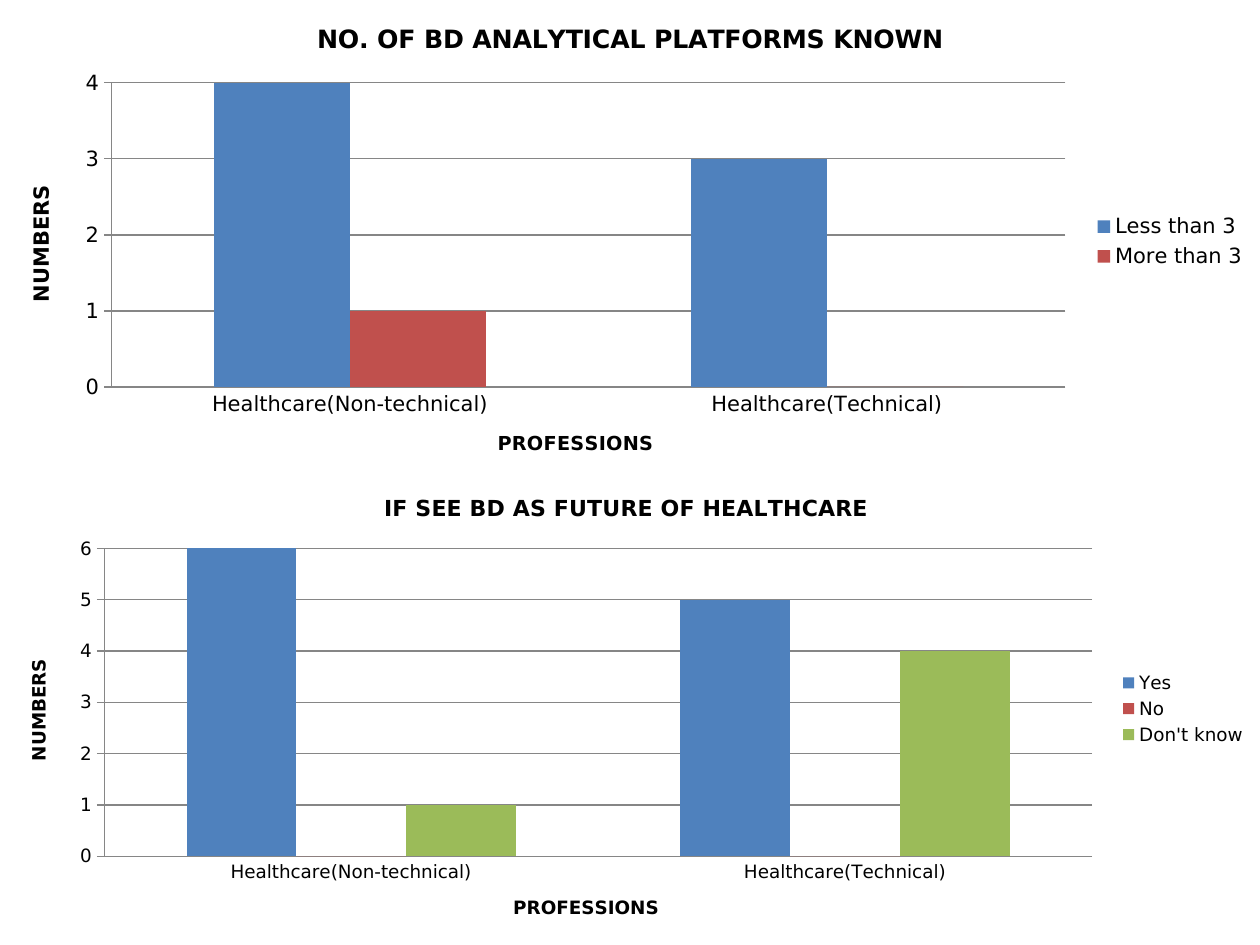
import pptx
import pptx.chart.data
import pptx.dml.color
import pptx.enum.chart
import pptx.oxml
import pptx.oxml.ns
import pptx.util

Pt = pptx.util.Pt


def color(hex_string):
    return pptx.dml.color.RGBColor.from_string(hex_string)


class SlideBuilder:
    font_name = "DejaVu Sans"
    text_color = "000000"
    line_color = "868686"
    border_color = "FFFFFF"
    line_width = 0.75
    series_colors = ["4F81BD", "C0504D", "9BBB59"]

    def __init__(self, slide):
        self.slide = slide

    def format_font(self, font, size, bold=False):
        font.name = self.font_name
        font.size = Pt(size)
        font.bold = bold
        font.color.rgb = color(self.text_color)

    def format_line(self, line):
        line.color.rgb = color(self.line_color)
        line.width = Pt(self.line_width)

    def write_title(self, title, text, size):
        paragraph = title.text_frame.paragraphs[0]
        paragraph.text = text
        self.format_font(paragraph.font, size, bold=True)

    def format_axis(self, axis, text, title_size, size, tick_mark):
        self.write_title(axis.axis_title, text, title_size)
        self.format_font(axis.tick_labels.font, size)
        self.format_line(axis.format.line)
        axis.major_tick_mark = tick_mark
        axis.minor_tick_mark = pptx.enum.chart.XL_TICK_MARK.NONE

    def add_border(self, chart):
        properties = pptx.oxml.parse_xml(
            f'<c:spPr {pptx.oxml.ns.nsdecls("c", "a")}>'
            f'<a:ln w="{Pt(self.line_width)}"><a:solidFill>'
            f'<a:srgbClr val="{self.border_color}"/>'
            '</a:solidFill></a:ln></c:spPr>'
        )
        chart.element.find(pptx.oxml.ns.qn("c:chart")).addnext(properties)

    def add_column_chart(self, top, height, title, title_size, size,
                         category_title_size, maximum, answers):
        chart_data = pptx.chart.data.CategoryChartData()
        chart_data.categories = ["Healthcare(Non-technical)", "Healthcare(Technical)"]
        for name, values in answers.items():
            chart_data.add_series(name, values)
        chart = self.slide.shapes.add_chart(
            pptx.enum.chart.XL_CHART_TYPE.COLUMN_CLUSTERED,
            Pt(0), Pt(top), Pt(720), Pt(height), chart_data,
        ).chart
        self.format_font(chart.font, size)
        self.add_border(chart)
        self.write_title(chart.chart_title, title, title_size)

        tick_marks = pptx.enum.chart.XL_TICK_MARK
        self.format_axis(chart.category_axis, "PROFESSIONS", category_title_size,
                         size, tick_marks.NONE)
        value_axis = chart.value_axis
        self.format_axis(value_axis, "NUMBERS", size, size, tick_marks.CROSS)
        value_axis.minimum_scale = 0
        value_axis.maximum_scale = maximum
        value_axis.major_unit = 1
        value_axis.has_major_gridlines = True
        self.format_line(value_axis.major_gridlines.format.line)

        chart.has_legend = True
        chart.legend.position = pptx.enum.chart.XL_LEGEND_POSITION.RIGHT
        chart.legend.include_in_layout = False
        self.format_font(chart.legend.font, size)

        plot = chart.plots[0]
        plot.vary_by_categories = False
        plot.gap_width = 150
        plot.overlap = 0
        for series, fill_color in zip(plot.series, self.series_colors):
            series.format.fill.solid()
            series.format.fill.fore_color.rgb = color(fill_color)
            series.invert_if_negative = False


def main():
    presentation = pptx.Presentation()
    presentation.slide_width = Pt(720)
    presentation.slide_height = Pt(540)
    slide = presentation.slides.add_slide(presentation.slide_layouts[6])
    builder = SlideBuilder(slide)
    builder.add_column_chart(
        top=0, height=276, title="NO. OF BD ANALYTICAL PLATFORMS KNOWN",
        title_size=14.4, size=12, category_title_size=11, maximum=4,
        answers={"Less than 3": (4, 3), "More than 3": (1, 0)},
    )
    builder.add_column_chart(
        top=270, height=270, title="IF SEE BD AS FUTURE OF HEALTHCARE ",
        title_size=12.6, size=10.5, category_title_size=10.5, maximum=6,
        answers={"Yes": (6, 5), "No": (0, 0), "Don't know": (1, 4)},
    )
    presentation.save("out.pptx")


if __name__ == "__main__":
    main()
